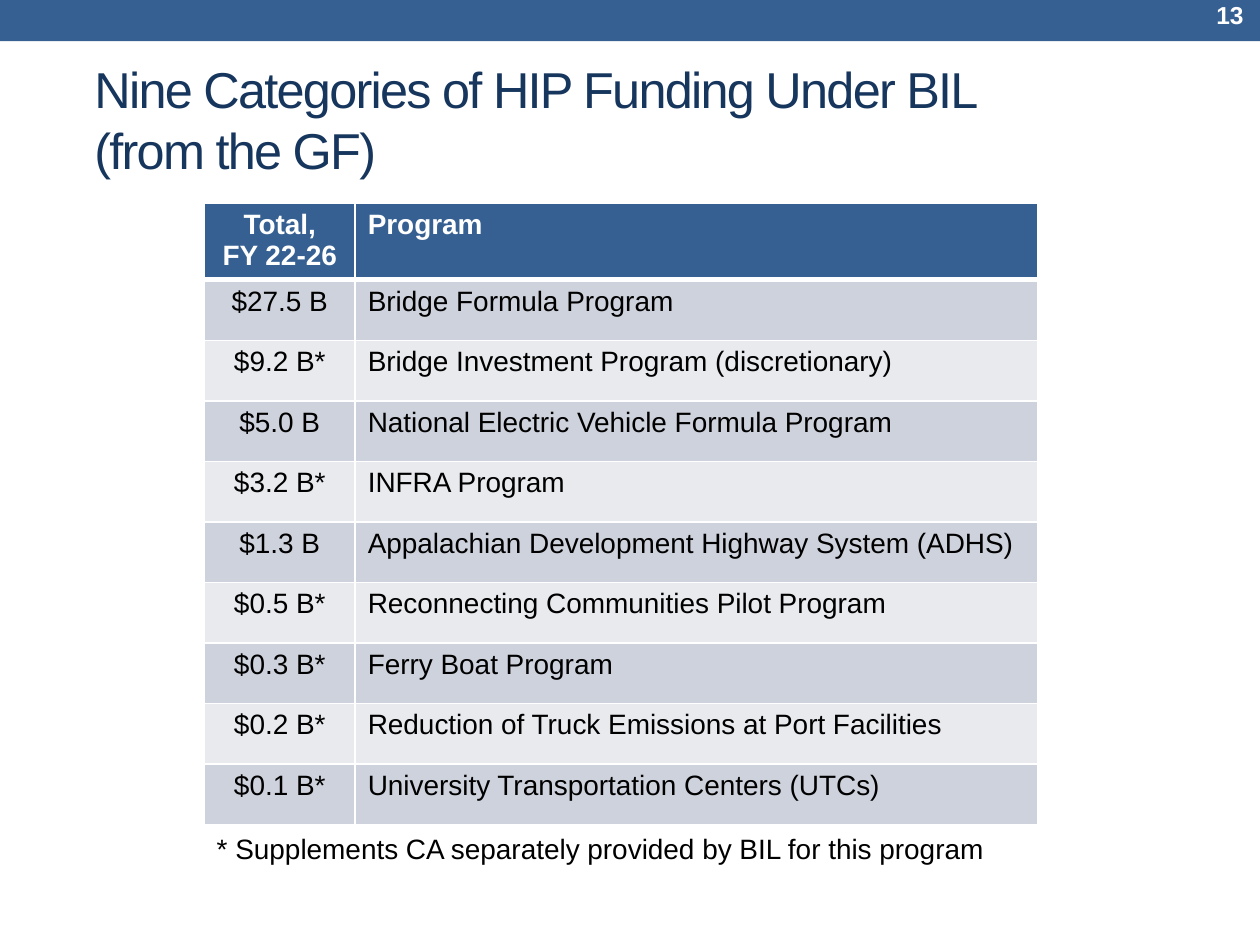
from lxml import etree
from pptx import Presentation
from pptx import util as u
from pptx.dml.color import RGBColor
from pptx.enum import shapes, text
from pptx.oxml.ns import qn

COLORS = {"bar": "366092", "title": "17365D", "white": "FFFFFF", "black": "000000",
          "odd": "CED2DC", "even": "E8EAEE"}
PROGRAMS = [
    ("$27.5 B", "Bridge Formula Program"),
    ("$9.2 B*", "Bridge Investment Program (discretionary)"),
    ("$5.0 B", "National Electric Vehicle Formula Program"),
    ("$3.2 B*", "INFRA Program"),
    ("$1.3 B", "Appalachian Development Highway System (ADHS)"),
    ("$0.5 B*", "Reconnecting Communities Pilot Program"),
    ("$0.3 B*", "Ferry Boat Program"),
    ("$0.2 B*", "Reduction of Truck Emissions at Port Facilities"),
    ("$0.1 B*", "University Transportation Centers (UTCs)"),
]
ALIGN = text.PP_ALIGN


def write(frame, words, size=16, color="black", bold=False, align=ALIGN.LEFT,
          anchor=text.MSO_ANCHOR.TOP, spacing=None):
    """Fill a text frame: \\n starts a paragraph, \\v breaks a line."""
    frame.text = words
    frame.word_wrap = True
    frame.vertical_anchor = anchor
    for paragraph in frame.paragraphs:
        paragraph.alignment = align
        for run in paragraph.runs:
            run.font.name = "Arial"
            run.font.size = u.Pt(size)
            run.font.bold = bold
            run.font.color.rgb = RGBColor.from_string(COLORS[color])
            if spacing is not None:
                run.font._element.set("spc", str(spacing * 100))


def set_borders(cell, bottom):
    """Give a cell white borders, with its own bottom width in points."""
    properties = cell._tc.get_or_add_tcPr()
    for side, width in (("L", 1), ("R", 1), ("T", 1), ("B", bottom)):
        line = etree.SubElement(properties, qn(f"a:ln{side}"), w=str(u.Pt(width)))
        fill = etree.SubElement(line, qn("a:solidFill"))
        etree.SubElement(fill, qn("a:srgbClr"), val=COLORS["white"])


deck = Presentation()
deck.slide_width, deck.slide_height = u.Cm(25.4), u.Cm(19.05)
slide = deck.slides.add_slide(deck.slide_layouts[5])

# Top bar
bar = slide.shapes.add_shape(shapes.MSO_SHAPE.RECTANGLE,
                             0, u.Cm(-0.18), deck.slide_width, u.Cm(1.01))
bar.shadow.inherit = False
bar.fill.solid()
bar.fill.fore_color.rgb = RGBColor.from_string(COLORS["bar"])
bar.line.fill.background()

# Title
title = slide.shapes.title
title.left, title.top, title.width, title.height = (
    u.Cm(1.65), u.Cm(1.17), u.Cm(21.74), u.Cm(2.46))
write(title.text_frame, "Nine Categories of HIP Funding Under BIL\v(from the GF)",
      size=28.8, color="title", anchor=text.MSO_ANCHOR.MIDDLE, spacing=-1)

# Funding table
rows = [("Total,\nFY 22-26", "Program")] + PROGRAMS
funding = slide.shapes.add_table(len(rows), 2, u.Cm(4.12), u.Cm(4.09),
                                 u.Cm(16.79), u.Cm(12.53)).table
funding.columns[0].width, funding.columns[1].width = u.Cm(3.04), u.Cm(13.75)
for r, row in enumerate(rows):
    header = r == 0
    funding.rows[r].height = u.Cm(1.55 if header else 1.22)
    band = "bar" if header else "odd" if r % 2 else "even"
    for c, words in enumerate(row):
        cell = funding.cell(r, c)
        set_borders(cell, bottom=3 if header else 1)
        cell.fill.solid()
        cell.fill.fore_color.rgb = RGBColor.from_string(COLORS[band])
        write(cell.text_frame, words, color="white" if header else "black",
              bold=header, align=ALIGN.LEFT if c else ALIGN.CENTER)

# Footnote
footnote = slide.shapes.add_textbox(u.Cm(4.12), u.Cm(16.64), u.Cm(16.89), u.Cm(0.94))
write(footnote.text_frame, "* Supplements CA separately provided by BIL for this program")

# Page number
page = slide.shapes.add_textbox(u.Cm(22.35), u.Cm(-0.15), u.Cm(2.97), u.Cm(0.91))
write(page.text_frame, "13", size=14, color="white", bold=True,
      align=ALIGN.RIGHT, anchor=text.MSO_ANCHOR.MIDDLE)

deck.save("out.pptx")
